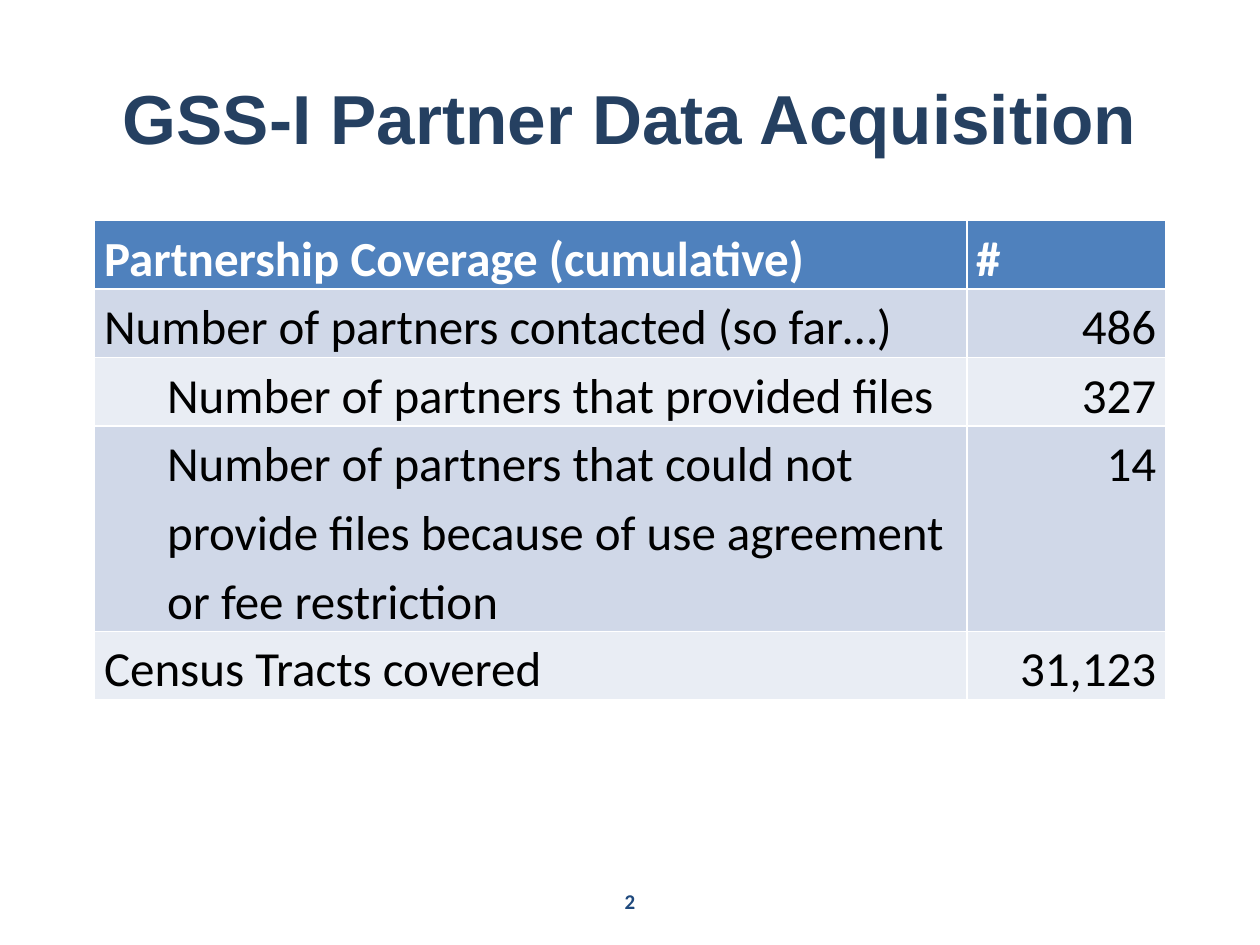
"""Build the partner data acquisition slide with its coverage table."""
from pptx import Presentation
from pptx import util as u
from pptx.dml.color import RGBColor
from pptx.enum import text

NAVY = RGBColor(0x25, 0x40, 0x61)
NUMBER_BLUE = RGBColor(0x1F, 0x49, 0x7D)
HEADER_BLUE = RGBColor(0x4F, 0x81, 0xBD)
BAND_DARK = RGBColor(0xD0, 0xD8, 0xE8)
BAND_LIGHT = RGBColor(0xE9, 0xED, 0xF4)
WHITE = RGBColor(0xFF, 0xFF, 0xFF)
BLACK = RGBColor(0x00, 0x00, 0x00)
LEFT, CENTER, RIGHT = text.PP_ALIGN.LEFT, text.PP_ALIGN.CENTER, text.PP_ALIGN.RIGHT


def set_attributes(target, values):
    for name, value in values.items():
        setattr(target, name, value)


def format_paragraph(paragraph, name, size, bold, color, alignment):
    paragraph.alignment = alignment
    set_attributes(paragraph.font, {"name": name, "size": u.Pt(size), "bold": bold})
    paragraph.font.color.rgb = color


presentation = Presentation()
set_attributes(presentation, {"slide_width": u.Cm(25.4), "slide_height": u.Cm(19.05)})
slide = presentation.slides.add_slide(presentation.slide_layouts[5])

title = slide.shapes.title
set_attributes(title, {"left": u.Cm(1.27), "top": u.Cm(0.76),
                       "width": u.Cm(22.86), "height": u.Cm(3.18)})
title.text_frame.text = "GSS-I Partner Data Acquisition"
title.text_frame.vertical_anchor = text.MSO_ANCHOR.MIDDLE
format_paragraph(title.text_frame.paragraphs[0], "Arial", 39.6, True, NAVY, CENTER)

number_box = slide.shapes.add_textbox(u.Cm(9.74), u.Cm(17.65), u.Cm(5.92), u.Cm(1.02))
set_attributes(number_box.text_frame, {"text": "2", "word_wrap": True,
                                       "vertical_anchor": text.MSO_ANCHOR.MIDDLE})
format_paragraph(number_box.text_frame.paragraphs[0], "Calibri", 12, True, NUMBER_BLUE, CENTER)

rows = [
    ("Partnership Coverage (cumulative)", "#", 0, 1),
    ("Number of partners contacted (so far…)", "486", 0, 1),
    ("Number of partners that provided files", "327", 1.27, 1),
    ("Number of partners that could not provide files because of use agreement\n"
     "or fee restriction", "14", 1.27, 3),
    ("Census Tracts covered", "31,123", 0, 1),
]
line_height = 1.38
table = slide.shapes.add_table(len(rows), 2, u.Cm(1.91), u.Cm(4.45), u.Cm(21.59),
                               u.Cm(line_height * sum(row[3] for row in rows))).table
for column, width in zip(table.columns, (17.58, 4.01)):
    column.width = u.Cm(width)

for row_index, (label, value, indent, lines) in enumerate(rows):
    table.rows[row_index].height = u.Cm(line_height * lines)
    header = row_index == 0
    fill_color = HEADER_BLUE if header else (BAND_LIGHT, BAND_DARK)[row_index % 2]
    for column_index, content in enumerate((label, value)):
        cell = table.cell(row_index, column_index)
        set_attributes(cell, {"margin_left": u.Cm(0.19), "margin_right": u.Cm(0.19),
                              "margin_top": 0, "margin_bottom": 0, "text": content})
        cell.fill.solid()
        cell.fill.fore_color.rgb = fill_color
        alignment = RIGHT if column_index and not header else LEFT
        for paragraph in cell.text_frame.paragraphs:
            paragraph.line_spacing = 1.15
            format_paragraph(paragraph, "Calibri", 28, header,
                             WHITE if header else BLACK, alignment)
            if indent and column_index == 0:
                paragraph._p.get_or_add_pPr().set("marL", str(u.Cm(indent)))

presentation.save("out.pptx")
